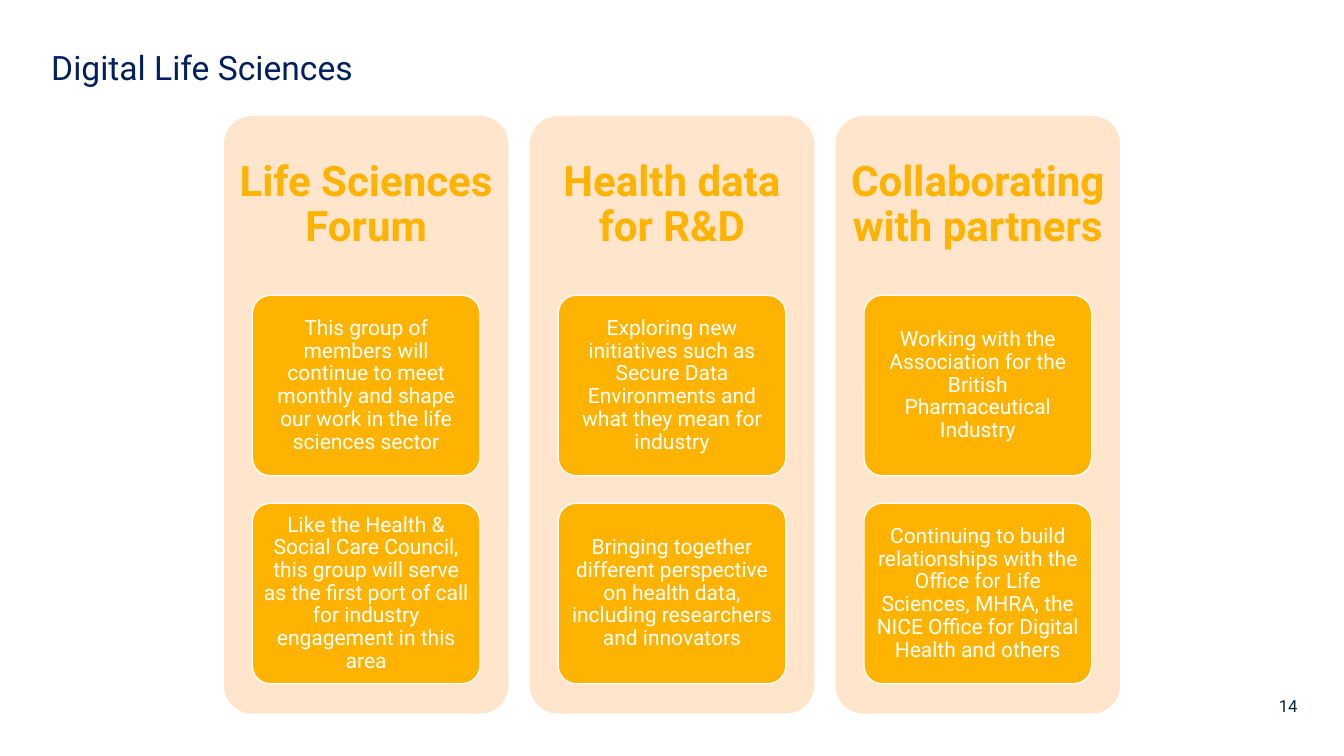
from pptx import Presentation
from pptx import util as u
from pptx.dml.color import RGBColor
from pptx.enum import shapes, text

NAVY = RGBColor(0x00, 0x20, 0x60)
INK = RGBColor(0x00, 0x26, 0x3E)
AMBER = RGBColor(0xFE, 0xB3, 0x00)
PEACH = RGBColor(0xFF, 0xE5, 0xCC)
WHITE = RGBColor(0xFF, 0xFF, 0xFF)

TITLE = {"size": u.Pt(24), "name": "Roboto"}
HEADING = {"size": u.Pt(30), "name": "Roboto", "bold": True}
BODY = {"size": u.Pt(15), "name": "Roboto"}
NUMBER = {"size": u.Pt(12), "name": "Roboto"}

COLUMNS = [
    ("Life Sciences Forum", [
        "This group of members will continue to meet monthly and shape "
        "our work in the life sciences sector",
        "Like the Health & Social Care Council, this group will serve as "
        "the first port of call for industry engagement in this area"]),
    ("Health data for R&D", [
        "Exploring new initiatives such as Secure Data Environments and "
        "what they mean for industry",
        "Bringing together different perspective on health data, "
        "including researchers and innovators"]),
    ("Collaborating with partners", [
        "Working with the Association for the British Pharmaceutical Industry",
        "Continuing to build relationships with the Office for Life Sciences, "
        "MHRA, the NICE Office for Digital Health and others"]),
]


def write(holder, words, style, colour, align, margins, **layout):
    """Fill a shape or text box with one formatted paragraph."""
    frame = holder.text_frame
    frame.word_wrap = True
    sides = ("margin_left", "margin_top", "margin_right", "margin_bottom")
    for side, margin in zip(sides, margins):
        setattr(frame, side, u.Inches(margin))
    frame.vertical_anchor = layout.get("anchor", text.MSO_ANCHOR.TOP)
    paragraph = frame.paragraphs[0]
    paragraph.text = words
    paragraph.alignment = align
    paragraph.line_spacing = layout.get("spacing", 1.0)
    for key, value in style.items():
        setattr(paragraph.font, key, value)
    paragraph.font.color.rgb = colour


def text_box(slide, box):
    return slide.shapes.add_textbox(*map(u.Inches, box))


def rounded(slide, box, fill):
    panel = slide.shapes.add_shape(
        shapes.MSO_SHAPE.ROUNDED_RECTANGLE, *map(u.Inches, box))
    panel.adjustments[0] = 0.1
    panel.shadow.inherit = False
    panel.fill.solid()
    panel.fill.fore_color.rgb = fill
    panel.line.fill.background()
    return panel


def add_card(slide, box, words):
    card = rounded(slide, box, AMBER)
    card.line.color.rgb = WHITE
    card.line.width = u.Pt(1)
    write(card, words, BODY, WHITE, text.PP_ALIGN.CENTER,
          (0.04, 0.03, 0.04, 0.03), anchor=text.MSO_ANCHOR.MIDDLE, spacing=0.9)


def add_column(slide, box, heading, cards):
    """Panel with its heading in the top 30% and cards spread below."""
    left, top, width, height = box
    rounded(slide, box, PEACH)
    head_height = 0.3 * height
    write(text_box(slide, (left, top, width, head_height)), heading, HEADING,
          AMBER, text.PP_ALIGN.CENTER, (0.12,) * 4,
          anchor=text.MSO_ANCHOR.MIDDLE, spacing=0.9)
    card_height = 0.302 * height
    pitch = 0.348 * height
    for row, words in enumerate(cards):
        add_card(slide, (left + 0.1 * width, top + head_height + row * pitch,
                         0.8 * width, card_height), words)


def add_columns(slide, box):
    left, top, width, height = box
    gap = 0.21
    column_width = (width - gap * (len(COLUMNS) - 1)) / len(COLUMNS)
    for index, (heading, cards) in enumerate(COLUMNS):
        add_column(slide, (left + index * (column_width + gap), top,
                           column_width, height), heading, cards)


def main():
    deck = Presentation()
    deck.slide_width, deck.slide_height = u.Inches(13.33), u.Inches(7.5)
    slide = deck.slides.add_slide(deck.slide_layouts[6])
    write(text_box(slide, (11.69, 6.84, 1.24, 0.31)), "14", NUMBER, INK,
          text.PP_ALIGN.RIGHT, (0, 0.06, 0.06, 0.06))
    add_columns(slide, (2.22, 1.15, 8.89, 5.93))
    write(text_box(slide, (0.41, 0.42, 7.36, 0.5)), "Digital Life Sciences",
          TITLE, NAVY, text.PP_ALIGN.LEFT, (0.1, 0.05, 0.1, 0.05))
    deck.save("out.pptx")


if __name__ == "__main__":
    main()
